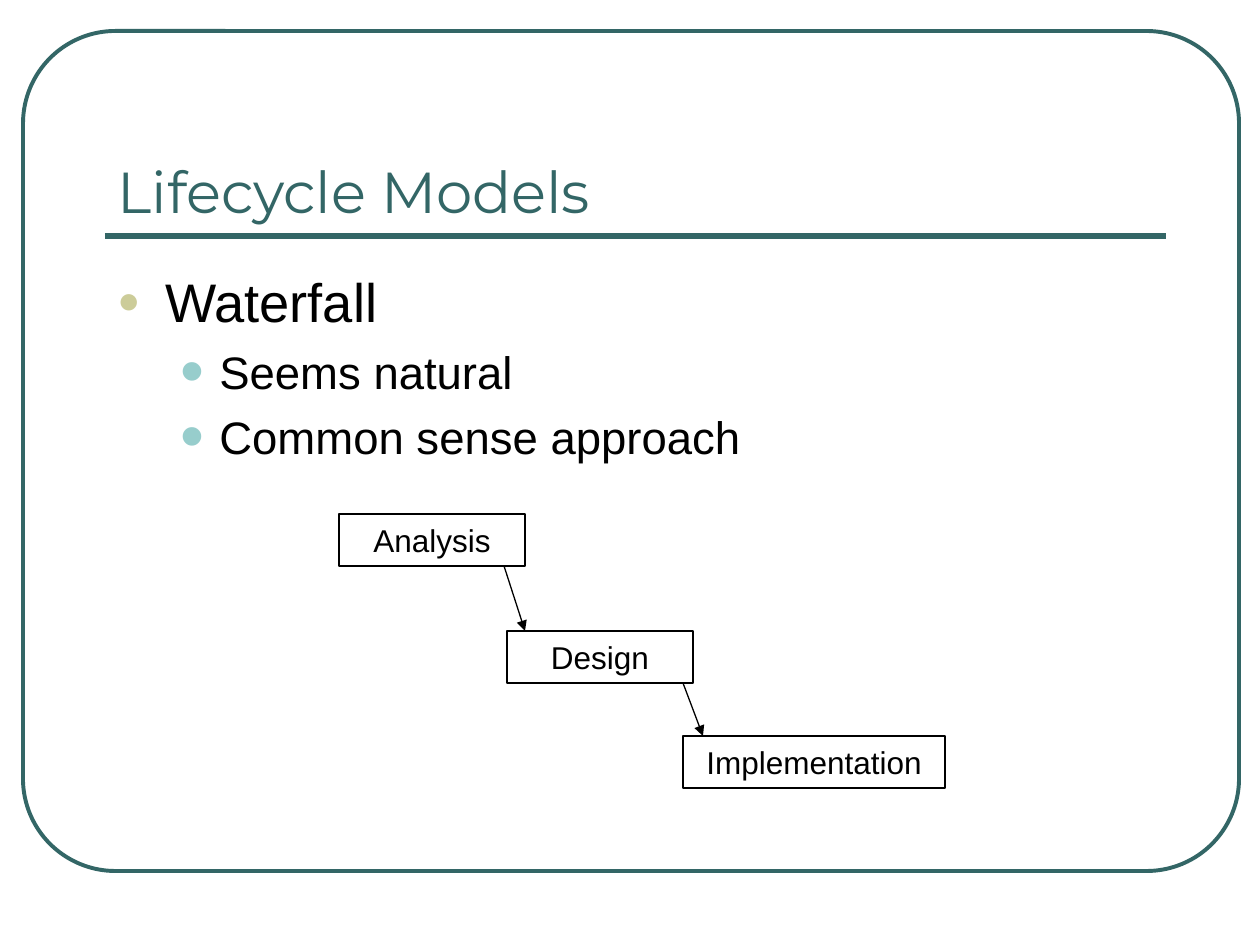
from dataclasses import dataclass

from lxml import etree
from pptx import Presentation
from pptx.dml.color import RGBColor
from pptx.enum.shapes import MSO_CONNECTOR, MSO_SHAPE
from pptx.enum.text import MSO_ANCHOR, MSO_AUTO_SIZE, PP_ALIGN
from pptx.oxml.ns import qn
from pptx.util import Emu, Pt

STRAIGHT = MSO_CONNECTOR.STRAIGHT
RECTANGLE, ROUNDED = MSO_SHAPE.RECTANGLE, MSO_SHAPE.ROUNDED_RECTANGLE
TOP, MIDDLE, BOTTOM = MSO_ANCHOR.TOP, MSO_ANCHOR.MIDDLE, MSO_ANCHOR.BOTTOM
LEFT, CENTER = PP_ALIGN.LEFT, PP_ALIGN.CENTER
TITLE_ONLY = 5
EMU_PER_PX = 914400 / 126


def px(length):
    return Emu(round(length * EMU_PER_PX))


@dataclass(frozen=True)
class Bullet:
    symbol: str
    color: str
    percent: int
    indent: int
    hanging: int
    size: int
    space_before: int


@dataclass(frozen=True)
class Theme:
    accent: str = "336666"
    ink: str = "000000"
    title_font: str = "Montserrat"
    body_font: str = "Arial"
    title_size: int = 33
    label_size: int = 18
    frame_line: float = 2.25
    rule_line: float = 3
    thin_line: float = 0.75
    bullets: tuple = (
        Bullet("●", "CCCC99", 70, 48, 48, 31, 4),
        Bullet("•", "97CDCC", 150, 102, 39, 26, 6),
    )


class SlideBuilder:
    def __init__(self, page, theme):
        self.page = page
        self.theme = theme

    def add_span(self, para, text, size, color=None, font=None):
        span = para.add_run()
        span.text = text
        span.font.size = Pt(size)
        span.font.name = font or self.theme.body_font
        span.font.color.rgb = RGBColor.from_string(color or self.theme.ink)

    def set_line(self, shape, color, width):
        shape.line.color.rgb = RGBColor.from_string(color)
        shape.line.width = Pt(width)

    def set_frame(self, shape, anchor):
        frame = shape.text_frame
        frame.word_wrap = True
        frame.auto_size = MSO_AUTO_SIZE.NONE
        frame.vertical_anchor = anchor
        return frame

    def add_outline(self, kind, left, top, width, height, color, line_width):
        shape = self.page.shapes.add_shape(
            kind, px(left), px(top), px(width), px(height))
        shape.shadow.inherit = False
        shape.fill.background()
        self.set_line(shape, color, line_width)
        return shape

    def add_frame(self, left, top, width, height, rounding):
        frame = self.add_outline(ROUNDED, left, top, width, height,
                                 self.theme.accent, self.theme.frame_line)
        frame.adjustments[0] = rounding

    def add_title(self, text, left, top, width, height):
        title = self.page.shapes.title
        title.left, title.top = px(left), px(top)
        title.width, title.height = px(width), px(height)
        para = self.set_frame(title, BOTTOM).paragraphs[0]
        para.alignment = LEFT
        self.add_span(para, text, self.theme.title_size,
                      self.theme.accent, self.theme.title_font)

    def add_bullets(self, items, left, top, width, height):
        """Add a list of (level, text) items."""
        box = self.page.shapes.add_textbox(
            px(left), px(top), px(width), px(height))
        frame = self.set_frame(box, TOP)
        for index, (level, text) in enumerate(items):
            para = frame.add_paragraph() if index else frame.paragraphs[0]
            bullet = self.theme.bullets[level]
            para.level = level
            para.space_before = Pt(bullet.space_before)
            self.set_bullet(para, bullet)
            self.add_span(para, text, bullet.size)

    def set_bullet(self, para, bullet):
        props = para._p.get_or_add_pPr()
        props.set("marL", str(px(bullet.indent)))
        props.set("indent", str(-px(bullet.hanging)))
        color = etree.SubElement(props, qn("a:buClr"))
        etree.SubElement(color, qn("a:srgbClr"), val=bullet.color)
        etree.SubElement(props, qn("a:buSzPct"), val=str(bullet.percent * 1000))
        etree.SubElement(props, qn("a:buFont"), typeface=self.theme.body_font)
        etree.SubElement(props, qn("a:buChar"), char=bullet.symbol)

    def add_step(self, text, left, top, width, height):
        step = self.add_outline(RECTANGLE, left, top, width, height,
                                self.theme.ink, self.theme.thin_line)
        para = self.set_frame(step, MIDDLE).paragraphs[0]
        para.alignment = CENTER
        self.add_span(para, text, self.theme.label_size)

    def add_line(self, start, end, color, width):
        line = self.page.shapes.add_connector(
            STRAIGHT, *(px(value) for value in (*start, *end)))
        self.set_line(line, color, width)
        etree.SubElement(line._element.spPr, qn("a:effectLst"))
        return line

    def add_rule(self, start, end):
        self.add_line(start, end, self.theme.accent, self.theme.rule_line)

    def add_arrow(self, start, end):
        arrow = self.add_line(start, end, self.theme.ink, self.theme.thin_line)
        etree.SubElement(arrow.line._get_or_add_ln(), qn("a:tailEnd"),
                         type="triangle")


def main():
    deck = Presentation()
    deck.slide_width, deck.slide_height = px(1260), px(945)
    page = deck.slides.add_slide(deck.slide_layouts[TITLE_ONLY])
    builder = SlideBuilder(page, Theme())

    left, width = 105, 1061
    builder.add_frame(23, 31, 1216, 840, 0.11)
    builder.add_rule((left, 236), (left + width, 236))
    builder.add_title("Lifecycle Models", left, 73, width, 158)
    builder.add_bullets(
        [(0, "Waterfall"), (1, "Seems natural"), (1, "Common sense approach")],
        left, 262, width, 557)

    step_height = 52
    steps = [("Analysis", 339, 514, 186), ("Design", 507, 631, 186),
             ("Implementation", 683, 736, 262)]
    for text, step_left, step_top, step_width in steps:
        builder.add_step(text, step_left, step_top, step_width, step_height)

    arrow_ends = [(504, 525), (683, 703)]
    for (start_x, end_x), upper, lower in zip(arrow_ends, steps, steps[1:]):
        builder.add_arrow((start_x, upper[2] + step_height), (end_x, lower[2]))

    deck.save("out.pptx")


if __name__ == "__main__":
    main()
